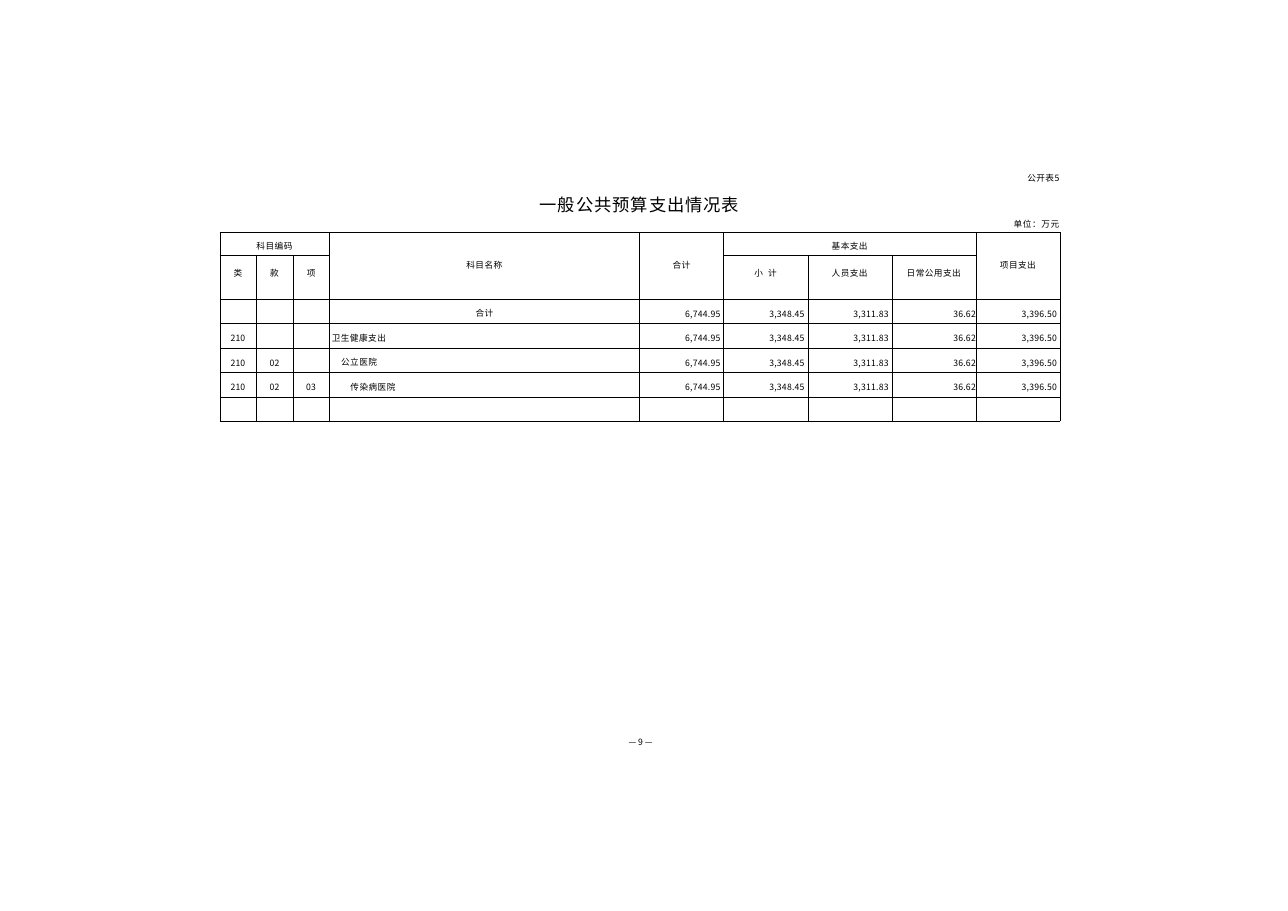
from lxml.etree import SubElement
from pptx import Presentation
from pptx.dml.color import RGBColor
from pptx.enum.text import MSO_ANCHOR, PP_ALIGN
from pptx.oxml.ns import qn
from pptx.util import Cm, Inches, Pt

FONT = "Noto Sans CJK SC"
BLACK = "000000"
BODY_SIZE = 8

TABLE_LEFT, TABLE_TOP = 2.82, 2.98
COLUMN_WIDTHS = [0.47] * 3 + [3.98] + [1.08] * 5
DATA_ROWS = 5
ROW_HEIGHTS = [0.29, 0.57] + [1.57 / DATA_ROWS] * DATA_ROWS
NAME_COLUMN, DAILY_COLUMN = 3, 7

# row, column, rows spanned, columns spanned, text, (top, bottom) margins
HEADERS = [
    (0, 0, 1, 3, "科目编码", (0.06, 0)),
    (0, 3, 2, 1, "科目名称", (0, 0.02)),
    (0, 4, 2, 1, "合计", (0, 0.02)),
    (0, 5, 1, 3, "基本支出", (0.06, 0)),
    (0, 8, 2, 1, "项目支出", (0, 0.02)),
    (1, 0, 1, 1, "类", (0, 0.1)),
    (1, 1, 1, 1, "款", (0, 0.1)),
    (1, 2, 1, 1, "项", (0, 0.1)),
    (1, 5, 1, 1, "小  计", (0, 0.1)),
    (1, 6, 1, 1, "人员支出", (0, 0.1)),
    (1, 7, 1, 1, "日常公用支出", (0, 0.1)),
]
SUBJECTS = [
    ([], "合计"),
    (["210"], "卫生健康支出"),
    (["210", "02"], "公立医院"),
    (["210", "02", "03"], "传染病医院"),
]
AMOUNTS = ["6,744.95", "3,348.45", "3,311.83", "36.62", "3,396.50"]


def color(value):
    return RGBColor.from_string(value)


def add_span(para, text, size=BODY_SIZE, spacing=0.4):
    """Add a run; spacing is the gap between letters in points."""
    span = para.add_run()
    span.text = text
    span.font.size = Pt(size)
    span.font.name = FONT
    span.font.color.rgb = color(BLACK)
    properties = span.font._element
    properties.set("spc", str(round(spacing * 100)))
    SubElement(properties, qn("a:ea"), typeface=FONT)


def set_margins(target, left=0, top=0, right=0, bottom=0):
    target.margin_left, target.margin_top = Inches(left), Inches(top)
    target.margin_right, target.margin_bottom = Inches(right), Inches(bottom)


def add_text_box(page, left, top, width, height):
    box = page.shapes.add_textbox(*map(Inches, (left, top, width, height)))
    set_margins(box.text_frame)
    box.text_frame.word_wrap = True
    return box.text_frame


def prepare_cell(cell):
    """Give an empty cell thin borders, no fill and a small line height."""
    properties = cell._tc.get_or_add_tcPr()
    for side in ("lnL", "lnR", "lnT", "lnB"):
        line = SubElement(properties, qn(f"a:{side}"), w=str(Pt(0.25)))
        fill = SubElement(line, qn("a:solidFill"))
        SubElement(fill, qn("a:srgbClr"), val=BLACK)
    cell.fill.background()
    cell.vertical_anchor = MSO_ANCHOR.MIDDLE
    set_margins(cell)
    end = cell.text_frame.paragraphs[0]._p.get_or_add_endParaRPr()
    end.set("sz", str(BODY_SIZE * 100))


def write_cell(cell, text, align=PP_ALIGN.CENTER, spacing=0.4, **margins):
    set_margins(cell, **margins)
    para = cell.text_frame.paragraphs[0]
    para.alignment = align
    add_span(para, text, spacing=spacing)


def add_budget_table(page):
    frame = page.shapes.add_table(
        len(ROW_HEIGHTS), len(COLUMN_WIDTHS), Inches(TABLE_LEFT), Inches(TABLE_TOP),
        Inches(sum(COLUMN_WIDTHS)), Inches(sum(ROW_HEIGHTS)))
    table = frame.table
    table.first_row = table.horz_banding = False
    for column, width in zip(table.columns, COLUMN_WIDTHS):
        column.width = Inches(width)
    for row, height in zip(table.rows, ROW_HEIGHTS):
        row.height = Inches(height)
    for cell in table.iter_cells():
        prepare_cell(cell)
    return table


def fill_headers(table):
    for row, column, rows, columns, text, (top, bottom) in HEADERS:
        cell = table.cell(row, column)
        if rows * columns > 1:
            cell.merge(table.cell(row + rows - 1, column + columns - 1))
        write_cell(cell, text, top=top, bottom=bottom)


def fill_subjects(table):
    for row, (codes, name) in enumerate(SUBJECTS, start=2):
        for column, code in enumerate(codes):
            write_cell(table.cell(row, column), code, spacing=0.1, top=0.05)
        name_cell = table.cell(row, NAME_COLUMN)
        if codes:
            indent = 0.03 + 0.12 * (len(codes) - 1)
            write_cell(name_cell, name, PP_ALIGN.LEFT, left=indent, top=0.04)
        else:
            write_cell(name_cell, name, top=0.04)
        for column, amount in enumerate(AMOUNTS, start=NAME_COLUMN + 1):
            right = 0 if column == DAILY_COLUMN else 0.04
            write_cell(table.cell(row, column), amount, PP_ALIGN.RIGHT,
                       spacing=0.2, right=right, top=0.05)


def add_heading(page):
    frame = add_text_box(page, 6.93, 2.22, 6.67, 0.76)
    label = frame.paragraphs[0]
    label.alignment = PP_ALIGN.RIGHT
    add_span(label, "公开表5", spacing=0.3)

    title = frame.add_paragraph()
    title.line_spacing = Pt(19.3)
    title.space_before = Pt(9.6)
    add_span(title, "一般公共预算支出情况表", size=16, spacing=0.9)

    unit = frame.add_paragraph()
    unit.alignment = PP_ALIGN.RIGHT
    unit.space_before = Pt(3.9)
    add_span(unit, "单位：万元", spacing=0.5)


def add_page_number(page):
    frame = add_text_box(page, 8.07, 9.46, 0.38, 0.16)
    add_span(frame.paragraphs[0], "— 9 —", spacing=-0.05)


def main():
    deck = Presentation()
    deck.slide_width, deck.slide_height = Cm(42), Cm(29.7)
    page = deck.slides.add_slide(deck.slide_layouts[6])
    table = add_budget_table(page)
    fill_headers(table)
    fill_subjects(table)
    add_heading(page)
    add_page_number(page)
    deck.save("out.pptx")


if __name__ == "__main__":
    main()
